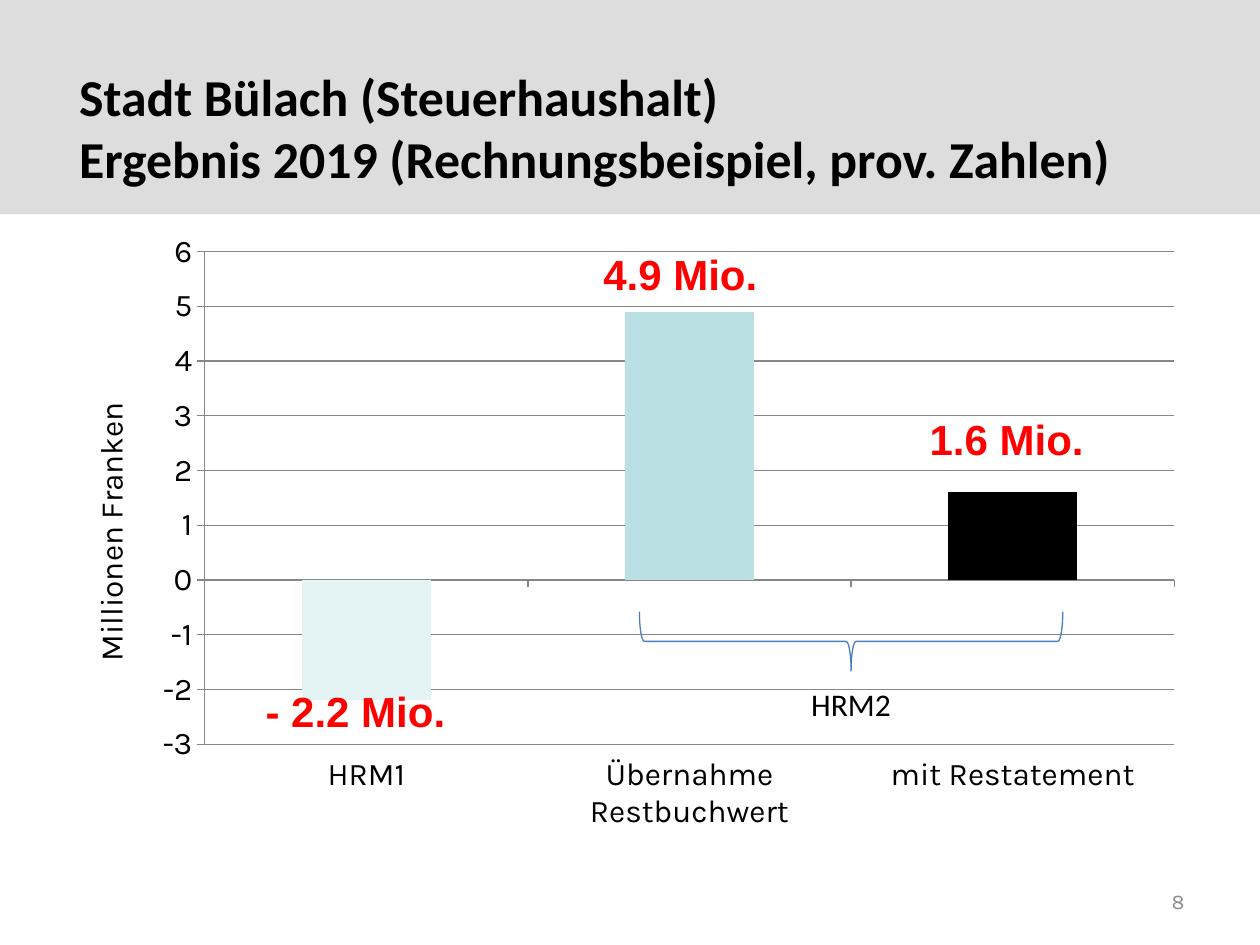
import pptx
import pptx.chart.data
import pptx.dml.color
import pptx.enum.chart
import pptx.enum.shapes
import pptx.enum.text
import pptx.oxml
import pptx.oxml.ns
import pptx.util
from pptx.util import Inches

HEX = {
    "band": "DDDDDD", "black": "000000", "red": "FF0000", "gray": "8C8C8C",
    "grid": "878787", "blue": "4B7EBC", "pale": "E4F3F4", "teal": "BBE0E3",
}
ALIGN = pptx.enum.text.PP_ALIGN
ANCHOR = pptx.enum.text.MSO_ANCHOR
SHAPE = pptx.enum.shapes.MSO_SHAPE


def rgb(name):
    return pptx.dml.color.RGBColor.from_string(HEX[name])


def set_font(font, size, face, color="black", bold=False):
    font.size = pptx.util.Pt(size)
    font.name = face
    font.bold = bold
    font.color.rgb = rgb(color)


def add_text(slide, text, box, size=18, face="Calibri", color="black",
             bold=False, align=ALIGN.LEFT, anchor=ANCHOR.TOP, wrap=True):
    frame = slide.shapes.add_textbox(*map(Inches, box)).text_frame
    frame.word_wrap = wrap
    frame.vertical_anchor = anchor
    if not wrap:
        frame.auto_size = pptx.enum.text.MSO_AUTO_SIZE.SHAPE_TO_FIT_TEXT
    para = frame.paragraphs[0]
    para.text = text
    para.alignment = align
    for run in para.runs:
        set_font(run.font, size, face, color, bold)


def add_shape(slide, kind, box, fill=None, line=None, turn=0):
    shape = slide.shapes.add_shape(kind, *map(Inches, box))
    shape.shadow.inherit = False
    shape.rotation = turn
    if fill:
        shape.fill.solid()
        shape.fill.fore_color.rgb = rgb(fill)
    else:
        shape.fill.background()
    if line:
        shape.line.color.rgb = rgb(line)
        shape.line.width = pptx.util.Pt(0.75)
    else:
        shape.line.fill.background()


def set_plot(chart, **parts):
    """Fix the inner plot area as fractions of the chart."""
    tags = '<c:layoutTarget val="inner"/><c:xMode val="edge"/><c:yMode val="edge"/>'
    tags += "".join(f'<c:{key} val="{val}"/>' for key, val in parts.items())
    space = pptx.oxml.ns.nsdecls("c")
    new = pptx.oxml.parse_xml(
        f"<c:layout {space}><c:manualLayout>{tags}</c:manualLayout></c:layout>")
    area = chart._chartSpace.chart.plotArea
    for old in area.findall(pptx.oxml.ns.qn("c:layout")):
        area.remove(old)
    area.insert(0, new)


def style_axes(chart):
    enum = pptx.enum.chart
    cat, val = chart.category_axis, chart.value_axis
    for axis in (cat, val):
        axis.major_tick_mark = enum.XL_TICK_MARK.OUTSIDE
        axis.minor_tick_mark = enum.XL_TICK_MARK.NONE
        axis.format.line.color.rgb = rgb("grid")
    cat.tick_label_position = enum.XL_TICK_LABEL_POSITION.LOW
    val.minimum_scale, val.maximum_scale, val.major_unit = -3, 6, 1
    val.has_major_gridlines = True
    val.major_gridlines.format.line.color.rgb = rgb("grid")
    title = val.axis_title.text_frame
    title.text = "Millionen Franken"
    set_font(title.paragraphs[0].runs[0].font, 18, "Karla")


def add_chart(slide, box):
    data = pptx.chart.data.CategoryChartData()
    data.categories = ["HRM1", "Übernahme Restbuchwert", "mit Restatement"]
    data.add_series("Series 1", [-2.2, 4.9, 1.6])
    kind = pptx.enum.chart.XL_CHART_TYPE.COLUMN_CLUSTERED
    chart = slide.shapes.add_chart(kind, *map(Inches, box), data).chart
    chart.has_legend = False
    chart.has_title = False
    set_font(chart.font, 18, "Karla")
    plot = chart.plots[0]
    plot.gap_width = 150
    plot.vary_by_categories = False
    bars = plot.series[0]
    bars.invert_if_negative = False
    bars.format.fill.solid()
    bars.format.fill.fore_color.rgb = rgb("pale")
    for i, color in enumerate(("teal", "black"), 1):
        fill = bars.points[i].format.fill
        fill.solid()
        fill.fore_color.rgb = rgb(color)
    style_axes(chart)
    set_plot(chart, x=0.125, y=0.05, w=0.855, h=0.79)


def main():
    deck = pptx.Presentation()
    deck.slide_width, deck.slide_height = Inches(10), Inches(7.5)
    slide = deck.slides.add_slide(deck.slide_layouts[6])
    add_shape(slide, SHAPE.RECTANGLE, (0, 0, 10, 1.7), fill="band")
    add_text(slide, "8", (7.17, 6.95, 2.33, 0.4), size=12, face="Karla",
             color="gray", align=ALIGN.RIGHT, anchor=ANCHOR.MIDDLE)
    add_text(slide, "Stadt Bülach (Steuerhaushalt)\v"
             "Ergebnis 2019 (Rechnungsbeispiel, prov. Zahlen)",
             (0.53, 0.38, 9, 1.25), size=29.6, bold=True, anchor=ANCHOR.MIDDLE)
    add_chart(slide, (0.5, 1.75, 9, 4.95))
    add_shape(slide, SHAPE.LEFT_BRACE, (6.52, 3.41, 0.47, 3.36),
              line="blue", turn=270)
    add_text(slide, "HRM2", (6.34, 5.39, 0.84, 0.4), wrap=False)
    for text, left, top, width in (("- 2.2 Mio.", 2.01, 5.39, 1.64),
                                   ("4.9 Mio.", 4.69, 1.92, 1.43),
                                   ("1.6 Mio.", 7.28, 3.23, 1.43)):
        add_text(slide, text, (left, top, width, 0.5), size=24, face="Arial",
                 color="red", bold=True, wrap=False)
    deck.save("out.pptx")


if __name__ == "__main__":
    main()
